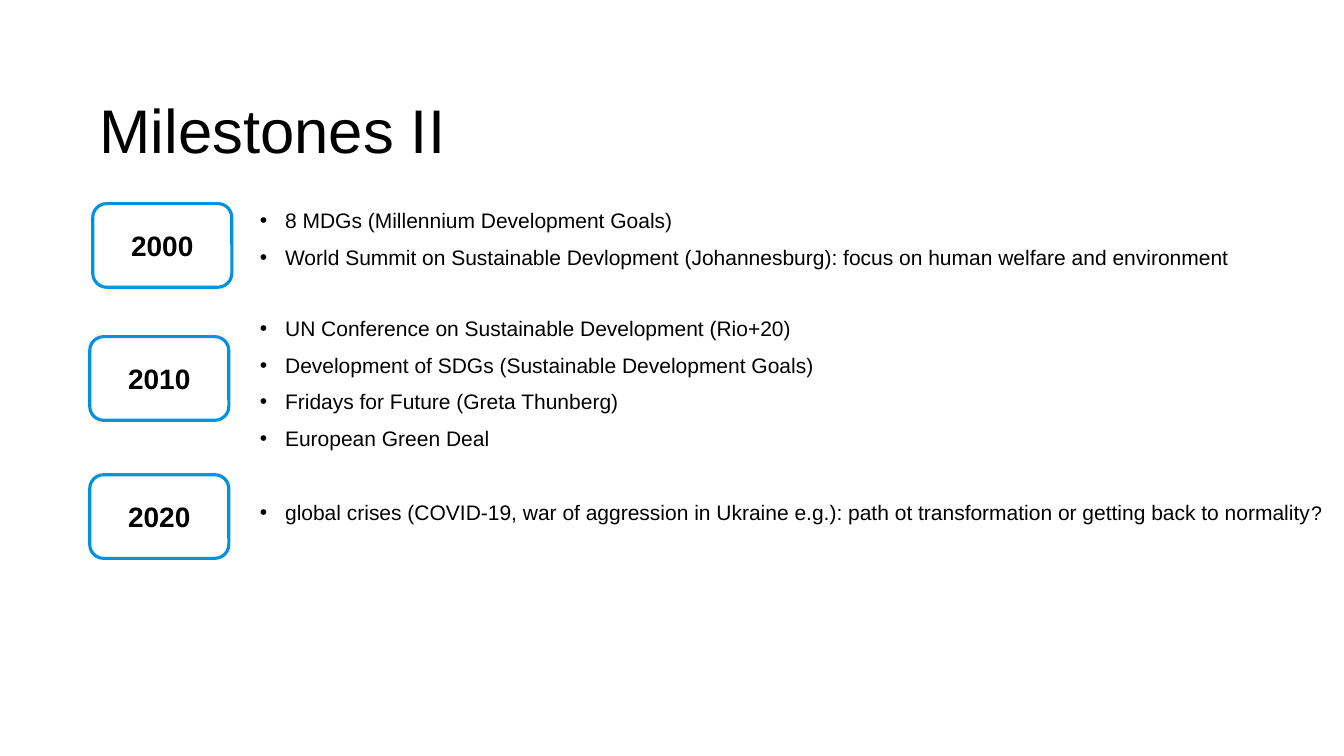
from lxml import etree
from pptx import Presentation
from pptx import util as u
from pptx.dml.color import RGBColor
from pptx.enum import shapes, text
from pptx.oxml.ns import qn

BLACK, BLUE = "000000", "0093DD"
YEARS = [("2000", 66.24, 145.44), ("2010", 64.08, 240.48), ("2020", 64.08, 339.12)]
MILESTONES = [
    ["8 MDGs (Millennium Development Goals)",
     "World Summit on Sustainable Devlopment (Johannesburg): focus on human welfare and environment"],
    ["UN Conference on Sustainable Development (Rio+20)",
     "Development of SDGs (Sustainable Development Goals)",
     "Fridays for Future (Greta Thunberg)",
     "European Green Deal"],
    ["global crises (COVID-19, war of aggression in Ukraine e.g.): "
     "path ot transformation or getting back to normality"],
]


def color(value):
    """Turn a hex string into a colour."""
    return RGBColor.from_string(value)


def set_font(font, size, bold=False):
    """Apply the slide's typeface to a font."""
    font.name, font.size, font.bold = "Arial", u.Pt(size), bold
    font.color.rgb = color(BLACK)


def add_text_box(page, left, top, width, height):
    """Add a wrapping text box and return its text frame."""
    box = page.shapes.add_textbox(u.Pt(left), u.Pt(top), u.Pt(width), u.Pt(height))
    box.text_frame.word_wrap = True
    return box.text_frame


def add_title(page, left, top, width, height):
    """Write the slide title, centred vertically in its box."""
    frame = add_text_box(page, left, top, width, height)
    frame.vertical_anchor = text.MSO_ANCHOR.MIDDLE
    para = frame.paragraphs[0]
    para.text = "Milestones II"
    para.line_spacing = 0.9
    set_font(para.font, 44)


def add_year(page, label, left, top, width, height):
    """Draw one outlined year badge."""
    badge = page.shapes.add_shape(shapes.MSO_SHAPE.ROUNDED_RECTANGLE,
                                  u.Pt(left), u.Pt(top), u.Pt(width), u.Pt(height))
    badge.shadow.inherit = False
    badge.fill.background()
    badge.line.color.rgb = color(BLUE)
    badge.line.width = u.Pt(2.25)
    badge.text_frame.vertical_anchor = text.MSO_ANCHOR.MIDDLE
    para = badge.text_frame.paragraphs[0]
    para.text = label
    para.alignment = text.PP_ALIGN.CENTER
    set_font(para.font, 20, True)


def add_bullet(para):
    """Give a paragraph a hanging round bullet."""
    props = para._p.get_or_add_pPr()
    props.set("marL", str(u.Pt(18)))
    props.set("indent", str(u.Pt(-18)))
    etree.SubElement(props, qn("a:buFont")).set("typeface", "Arial")
    etree.SubElement(props, qn("a:buChar")).set("char", "•")


def add_milestones(page, left, top, width, height):
    """List the milestones in groups, with a wider gap before each new group."""
    frame = add_text_box(page, left, top, width, height)
    para = frame.paragraphs[0]
    for group, items in enumerate(MILESTONES):
        for row, item in enumerate(items):
            if group or row:
                para = frame.add_paragraph()
                para.space_before = u.Pt(10 if row else 34.5)
            para.text = item
            para.line_spacing = 1.0 if group == 2 else 0.9
            add_bullet(para)
            set_font(para.font, 15)
    span = para.add_run()
    span.text = "?"
    span.font.size = u.Pt(14)


def main():
    """Build and save the milestones slide."""
    deck = Presentation()
    deck.slide_width, deck.slide_height = u.Pt(960), u.Pt(540)
    page = deck.slides.add_slide(deck.slide_layouts[6])
    add_title(page, 64.08, 28.8, 770.4, 133.2)
    add_milestones(page, 178.56, 146.88, 829.44, 342.72)
    for label, left, top in YEARS:
        add_year(page, label, left, top, 99.36, 59.76)
    deck.save("out.pptx")


if __name__ == "__main__":
    main()
